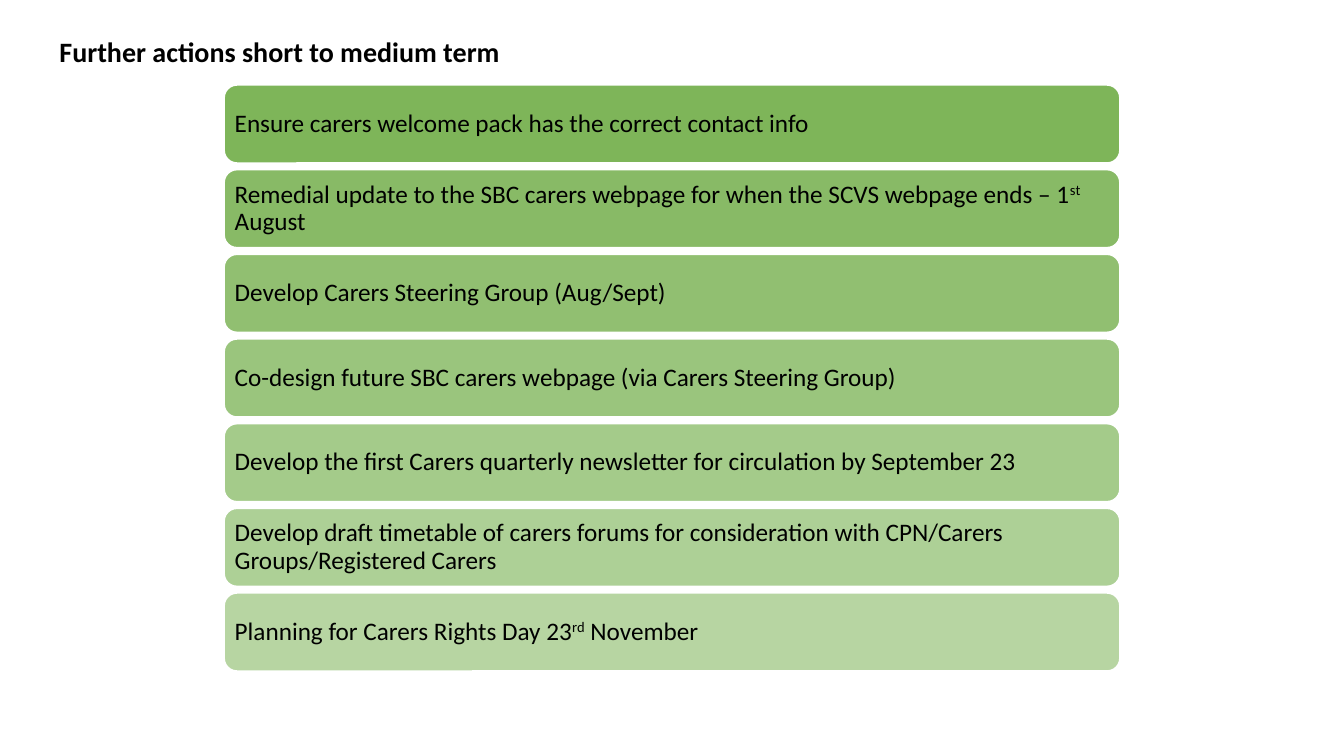
import pptx
import pptx.dml.color
import pptx.enum.shapes
import pptx.enum.text
import pptx.oxml
import pptx.oxml.ns
import pptx.util
from pptx.util import Inches

ACTIONS = [
    ["Ensure carers welcome pack has the correct contact info"],
    ["Remedial update to the SBC carers webpage for when the SCVS webpage ends – 1", "st", " August"],
    ["Develop Carers Steering Group (Aug/Sept)"],
    ["Co-design future SBC carers webpage (via Carers Steering Group)"],
    ["Develop the first Carers quarterly newsletter for circulation by September 23"],
    ["Develop draft timetable of carers forums for consideration with CPN/Carers "
     "Groups/Registered Carers"],
    ["Planning for Carers Rights Day 23", "rd", " November"],
]
FIRST_TOP = 0.84
STEP = 0.84


def colour(value):
    return pptx.dml.color.RGBColor.from_string(value)


def add_text(para, text, size=18, bold=False, raised=False):
    span = para.add_run()
    span.text = text
    span.font.name = "Calibri"
    span.font.size = pptx.util.Pt(size)
    span.font.bold = bold
    span.font.color.rgb = colour("000000")
    if raised:
        span._r.get_or_add_rPr().set("baseline", "30000")


def set_frame(frame, left, side):
    frame.word_wrap = True
    frame.vertical_anchor = pptx.enum.text.MSO_ANCHOR.MIDDLE
    frame.margin_left = Inches(left)
    frame.margin_top = frame.margin_right = frame.margin_bottom = Inches(side)
    para = frame.paragraphs[0]
    para.alignment = pptx.enum.text.PP_ALIGN.LEFT
    para.line_spacing = 0.9
    return para


def set_opacity(box, percent):
    fill_colour = box._element.spPr.find(
        pptx.oxml.ns.qn("a:solidFill") + "/" + pptx.oxml.ns.qn("a:srgbClr"))
    alpha = pptx.oxml.parse_xml(f'<a:alpha {pptx.oxml.ns.nsdecls("a")} val="{percent * 1000}"/>')
    fill_colour.append(alpha)


def add_title(page, text):
    title = page.shapes.title
    title.left, title.top = Inches(0.43), Inches(0.31)
    title.width, title.height = Inches(6.02), Inches(0.44)
    title.text_frame.auto_size = pptx.enum.text.MSO_AUTO_SIZE.NONE
    para = set_frame(title.text_frame, 0.16, 0.05)
    add_text(para, text, size=20, bold=True)


def add_action(page, top, opacity, pieces):
    box = page.shapes.add_shape(
        pptx.enum.shapes.MSO_SHAPE.ROUNDED_RECTANGLE,
        Inches(2.22), Inches(top), Inches(8.89), Inches(0.78))
    box.shadow.inherit = False
    box.fill.solid()
    box.fill.fore_color.rgb = colour("70AD47")
    set_opacity(box, opacity)
    box.line.color.rgb = colour("FFFFFF")
    box.line.width = pptx.util.Pt(1.5)
    para = set_frame(box.text_frame, 0.07, 0.07)
    for index, piece in enumerate(pieces):
        add_text(para, piece, raised=index == 1)


def main():
    deck = pptx.Presentation()
    deck.slide_width, deck.slide_height = Inches(13.33), Inches(7.5)
    page = deck.slides.add_slide(deck.slide_layouts[5])
    add_title(page, "Further actions short to medium term")
    for index, pieces in enumerate(ACTIONS):
        opacity = round(90 - 40 * index / (len(ACTIONS) - 1))
        add_action(page, FIRST_TOP + index * STEP, opacity, pieces)
    deck.save("out.pptx")


if __name__ == "__main__":
    main()
